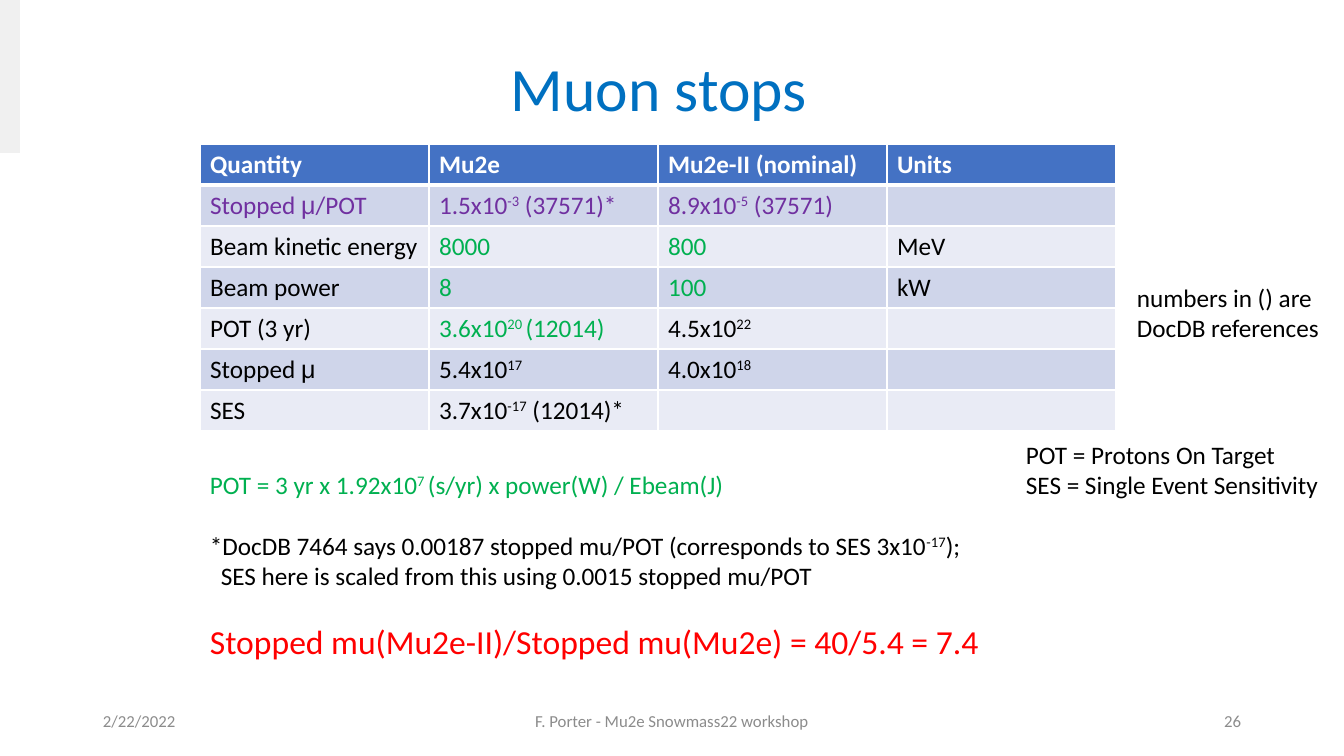
from itertools import groupby

from lxml.etree import SubElement
from pptx import Presentation
from pptx.dml.color import RGBColor
from pptx.enum.shapes import MSO_SHAPE
from pptx.enum.text import MSO_ANCHOR, PP_ALIGN
from pptx.oxml.ns import qn
from pptx.util import Emu, Pt

PX_PER_INCH = 100.8
W, H = 1344, 756
BLACK, WHITE, GREEN, PURPLE, RED = "000000", "FFFFFF", "00B050", "7030A0", "FF0000"
BLUE, GREY = "0070C0", "8C8C8C"
HEADER_FILL, BAND_FILLS = "4472C4", ("E9EBF5", "CFD5EA")

HEADINGS = ["Quantity", "Mu2e", "Mu2e-II (nominal)", "Units"]
# Text between ^ marks is superscript; each cell is (text, colour)
ROWS = [
    [("Stopped μ/POT", PURPLE), ("1.5x10^-3^ (37571)*", PURPLE),
     ("8.9x10^-5^ (37571)", PURPLE), ("", BLACK)],
    [("Beam kinetic energy", BLACK), ("8000", GREEN), ("800", GREEN), ("MeV", BLACK)],
    [("Beam power", BLACK), ("8", GREEN), ("100", GREEN), ("kW", BLACK)],
    [("POT (3 yr)", BLACK), ("3.6x10^20 ^(12014)", GREEN), ("4.5x10^22", BLACK), ("", BLACK)],
    [("Stopped μ", BLACK), ("5.4x10^17", BLACK), ("4.0x10^18", BLACK), ("", BLACK)],
    [("SES", BLACK), ("3.7x10^-17^ (12014)*", BLACK), ("", BLACK), ("", BLACK)],
]


def px(n):
    return Emu(round(n * 914400 / PX_PER_INCH))


def rgb(value):
    return RGBColor.from_string(value)


def add_text(tf, text, size=18, color=BLACK, bold=False, align=PP_ALIGN.LEFT,
             before=0, indent=0, spacing=None):
    """Write one paragraph, using the first one if it is still empty."""
    p = tf.paragraphs[0] if not tf.text else tf.add_paragraph()
    p.alignment = align
    p.space_before = Pt(before)
    if spacing:
        p.line_spacing = spacing
    if indent:
        p._p.get_or_add_pPr().set("marL", str(px(indent)))
    p.font.size = Pt(size)
    for i, part in enumerate(text.split("^")):
        for is_mu, chars in groupby(part, lambda ch: ch == "μ"):
            r = p.add_run()
            r.text = "".join(chars)
            f = r.font
            f.name = "Arial" if is_mu else "Calibri"
            f.size, f.bold = Pt(size), bold
            f.color.rgb = rgb(color)
            if i % 2:
                f._element.set("baseline", "30000")


def add_box(s, x, y, w, h, anchor=MSO_ANCHOR.TOP, wrap=True):
    tf = s.shapes.add_textbox(px(x), px(y), px(w), px(h)).text_frame
    tf.word_wrap = wrap
    tf.vertical_anchor = anchor
    return tf


def set_borders(cell, bottom):
    tcPr = cell._tc.get_or_add_tcPr()
    for side, width in (("L", 1), ("R", 1), ("T", 1), ("B", bottom)):
        ln = SubElement(tcPr, qn(f"a:ln{side}"), w=str(Pt(width)))
        fill = SubElement(ln, qn("a:solidFill"))
        SubElement(fill, qn("a:srgbClr"), val=WHITE)


def add_edge_bar(s, x, y, w, h):
    sp = s.shapes.add_shape(MSO_SHAPE.RECTANGLE, px(x), px(y), px(w), px(h))
    sp.shadow.inherit = False
    sp.fill.solid()
    sp.fill.fore_color.rgb = rgb("F0F0F0")
    sp.line.fill.background()


def add_title(s, x, y, w, h):
    tf = add_box(s, x, y, w, h, MSO_ANCHOR.MIDDLE)
    add_text(tf, "Muon stops", size=44, color=BLUE, align=PP_ALIGN.CENTER, spacing=0.9)


def add_stops_table(s, x, y, col_w, row_h):
    cells = [[(heading, WHITE) for heading in HEADINGS]] + ROWS
    n_rows, n_cols = len(cells), len(HEADINGS)
    table = s.shapes.add_table(n_rows, n_cols, px(x), px(y),
                               px(n_cols * col_w), px(n_rows * row_h)).table
    for col in table.columns:
        col.width = px(col_w)
    for i, row in enumerate(cells):
        table.rows[i].height = px(row_h)
        header = i == 0
        for j, (text, color) in enumerate(row):
            cell = table.cell(i, j)
            set_borders(cell, bottom=3 if header else 1)
            cell.fill.solid()
            cell.fill.fore_color.rgb = rgb(HEADER_FILL if header else BAND_FILLS[i % 2])
            add_text(cell.text_frame, text, color=color, bold=header)


def add_notes_on_stops(s, x, y, w, h):
    tf = add_box(s, x, y, w, h, wrap=False)
    add_text(tf, "POT = 3 yr x 1.92x10^7 ^(s/yr) x power(W) / Ebeam(J)", color=GREEN)
    add_text(tf, "*DocDB 7464 says 0.00187 stopped mu/POT (corresponds to SES 3x10^-17^);",
             before=22)
    add_text(tf, "SES here is scaled from this using 0.0015 stopped mu/POT", indent=11)
    add_text(tf, "Stopped mu(Mu2e-II)/Stopped mu(Mu2e) = 40/5.4 = 7.4",
             size=24, color=RED, before=22)


def add_legend(s, x, y, w, h, lines, wrap):
    tf = add_box(s, x, y, w, h, wrap=wrap)
    for line in lines:
        add_text(tf, line)


def add_footer(s, y, h):
    for x, w, text, align in (
        (93, 302, "2/22/2022", PP_ALIGN.LEFT),
        (445, 454, "F. Porter - Mu2e Snowmass22 workshop", PP_ALIGN.CENTER),
        (949, 302, "26", PP_ALIGN.RIGHT),
    ):
        tf = add_box(s, x, y, w, h, MSO_ANCHOR.MIDDLE)
        add_text(tf, text, size=12, color=GREY, align=align)


def main():
    prs = Presentation()
    prs.slide_width, prs.slide_height = px(W), px(H)
    s = prs.slides.add_slide(prs.slide_layouts[6])
    # Heading
    add_edge_bar(s, 0, 0, 20, 153)
    add_title(s, 93, 40, 1132, 104)
    # Values and remarks
    add_stops_table(s, 200, 144, 229, 41)
    add_notes_on_stops(s, 200, 464, 803, 204)
    # Legends at the right
    add_legend(s, 1127, 277, W - 1127, 72, ["numbers in () are DocDB references"], wrap=True)
    add_legend(s, 1016, 434, 316, 72,
               ["POT = Protons On Target", "SES = Single Event Sensitivity"], wrap=False)
    add_footer(s, 701, 40)
    prs.save("out.pptx")


if __name__ == "__main__":
    main()
